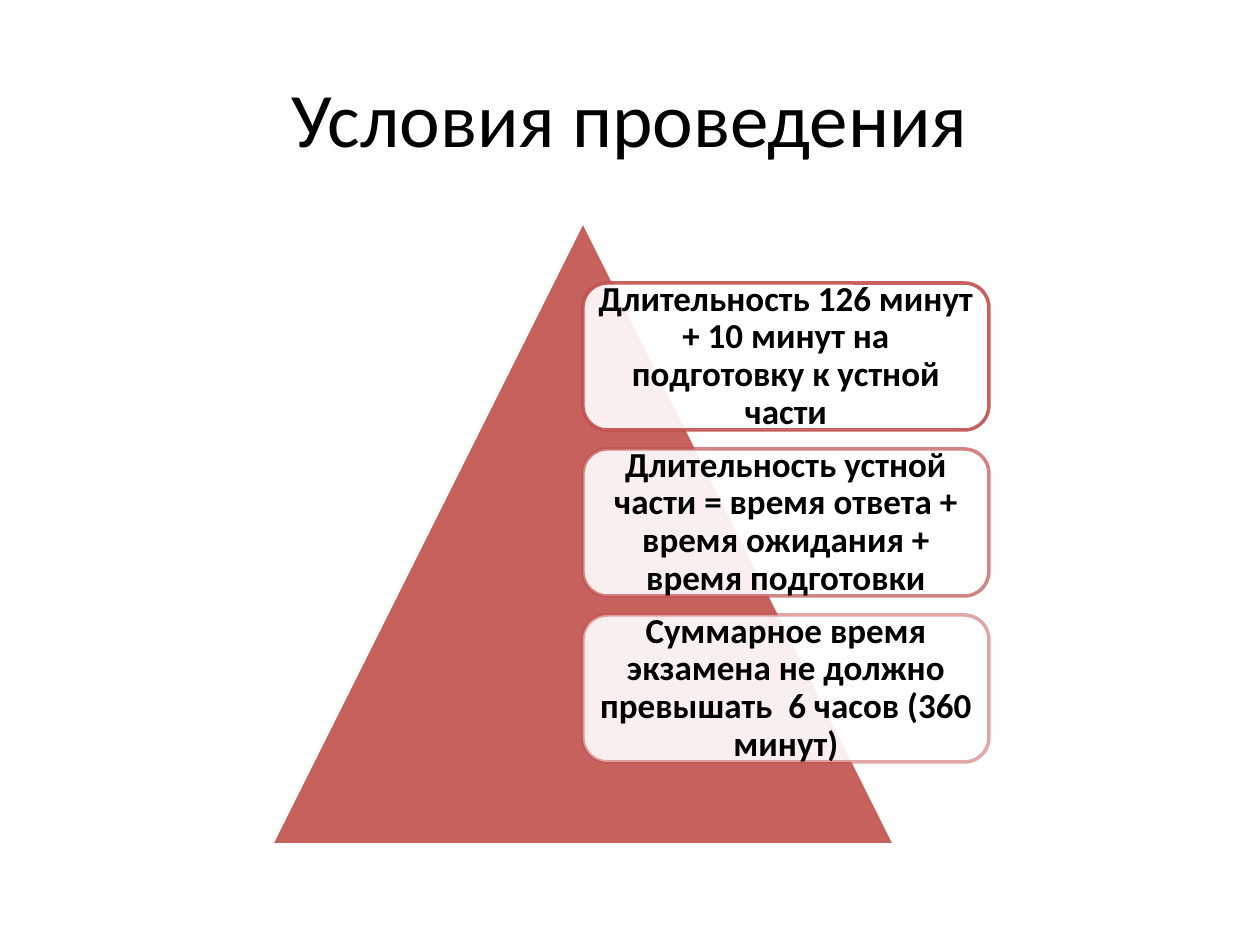
from dataclasses import dataclass

from lxml import etree
from pptx import Presentation
from pptx.dml.color import RGBColor
from pptx.enum.shapes import MSO_SHAPE
from pptx.enum.text import MSO_ANCHOR, PP_ALIGN
from pptx.oxml.ns import qn
from pptx.util import Pt

EMU_PER_PX = 914400 // 126
TRIANGLE = MSO_SHAPE.ISOSCELES_TRIANGLE
ROUNDED = MSO_SHAPE.ROUNDED_RECTANGLE
MIDDLE = MSO_ANCHOR.MIDDLE
CENTER = PP_ALIGN.CENTER


@dataclass(frozen=True)
class Theme:
    font: str = "Calibri"
    ink: str = "000000"
    paper: str = "FFFFFF"
    accent: str = "C0504D"
    title_size: int = 44
    label_size: int = 20
    line_width: int = 2
    fill_opacity: int = 90


THEME = Theme()

TITLE = "Условия проведения"
CONDITIONS = [
    ("Длительность 126 минут + 10 минут на подготовку к устной части", 90),
    ("Длительность устной части = время ответа + время ожидания + время подготовки", 70),
    ("Суммарное время экзамена не должно превышать  6 часов (360 минут)", 50),
]


def px(*lengths):
    return [length * EMU_PER_PX for length in lengths]


def paint(fill, color, opacity=100):
    """Make a fill solid, with its opacity in percent."""
    fill.solid()
    fill.fore_color.rgb = RGBColor.from_string(color)
    if opacity < 100:
        color_node = fill._xPr.find(qn("a:solidFill"))[0]
        etree.SubElement(color_node, qn("a:alpha"), val=str(opacity * 1000))


def write(box, text, size, bold=False, spacing=1.0, margins=(0, 0)):
    frame = box.text_frame
    across, down = px(*margins)
    frame_format = {
        "word_wrap": True, "vertical_anchor": MIDDLE,
        "margin_left": across, "margin_right": across,
        "margin_top": down, "margin_bottom": down,
    }
    for name, value in frame_format.items():
        setattr(frame, name, value)
    para = frame.paragraphs[0]
    para.alignment = CENTER
    para.line_spacing = spacing
    span = para.add_run()
    span.text = text
    font_format = {"name": THEME.font, "size": Pt(size), "bold": bold}
    for name, value in font_format.items():
        setattr(span.font, name, value)
    span.font.color.rgb = RGBColor.from_string(THEME.ink)


def add_title(page, text):
    box = page.shapes.add_textbox(*px(63, 38, 1134, 157))
    write(box, text, THEME.title_size, margins=(13, 6))


def add_figure(page, preset, place, fill, line, line_opacity=100):
    shape = page.shapes.add_shape(preset, *px(*place))
    shape.shadow.inherit = False
    paint(shape.fill, fill, THEME.fill_opacity)
    paint(shape.line.fill, line, line_opacity)
    shape.line.width = Pt(THEME.line_width)
    return shape


def add_conditions(page, conditions):
    left, top, width, height, pitch = 583, 283, 406, 147, 166
    for row, (text, line_opacity) in enumerate(conditions):
        place = (left, top + row * pitch, width, height)
        box = add_figure(page, ROUNDED, place, THEME.paper, THEME.accent, line_opacity)
        write(box, text, THEME.label_size, bold=True, spacing=0.9, margins=(3, 3))


def main():
    deck = Presentation()
    deck.slide_width, deck.slide_height = px(1260, 945)
    page = deck.slides.add_slide(deck.slide_layouts[6])
    add_title(page, TITLE)
    add_figure(page, TRIANGLE, (271, 221, 624, 624), THEME.accent, THEME.paper)
    add_conditions(page, CONDITIONS)
    deck.save("out.pptx")


if __name__ == "__main__":
    main()
